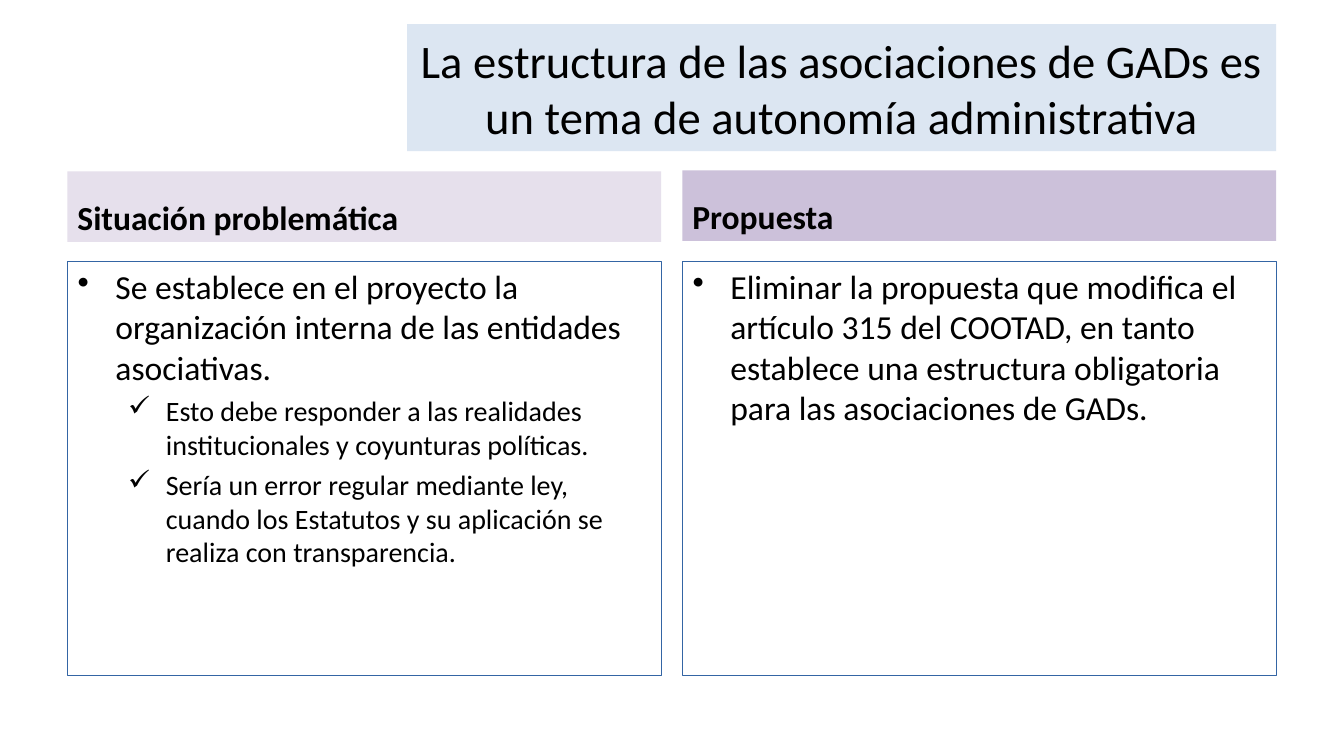
from dataclasses import dataclass

from lxml.etree import SubElement
from pptx import Presentation
from pptx.dml.color import RGBColor
from pptx.enum.shapes import MSO_SHAPE
from pptx.enum.text import MSO_ANCHOR, MSO_AUTO_SIZE, PP_ALIGN
from pptx.oxml.ns import qn
from pptx.util import Pt


@dataclass(frozen=True)
class Theme:
    """Colours, font and type sizes of the slide."""
    font: str = "Calibri"
    ink: str = "000000"
    title_fill: str = "DCE6F2"
    problem_fill: str = "E6E0EC"
    proposal_fill: str = "CCC1DA"
    border: str = "3465A4"
    border_width: float = 0.75
    title_size: float = 33.3
    main_size: float = 24
    detail_size: float = 20
    space_before: float = 4.8


THEME = Theme()
TITLE = "La estructura de las asociaciones de GADs es un tema de autonomía administrativa"
COLUMN_WIDTH = 424.1
HEADING_HEIGHT = 50.4
BODY_TOP, BODY_HEIGHT = 186.5, 295.9
BULLETS = [("•", 27.2, -27, THEME.main_size), ("✓", 63.2, -27, THEME.detail_size)]
COLUMNS = [
    (48.2, 122.4, "Situación problemática", THEME.problem_fill, [
        (0, "Se establece en el proyecto la organización interna de las entidades asociativas."),
        (1, "Esto debe responder a las realidades institucionales y coyunturas políticas."),
        (1, "Sería un error regular mediante ley, cuando los Estatutos y su aplicación "
            "se realiza con transparencia."),
    ]),
    (487.4, 121.7, "Propuesta", THEME.proposal_fill, [
        (0, "Eliminar la propuesta que modifica el artículo 315 del COOTAD, en tanto "
            "establece una estructura obligatoria para las asociaciones de GADs."),
    ]),
]


def style_text(paragraph, size, bold=False, align=PP_ALIGN.LEFT):
    """Apply the theme font to a paragraph's runs."""
    paragraph.alignment = align
    for run in paragraph.runs:
        run.font.name = THEME.font
        run.font.size = Pt(size)
        run.font.bold = bold
        run.font.color.rgb = RGBColor.from_string(THEME.ink)


def add_bullet(paragraph, level):
    """Give a paragraph the marker and hanging indent of its level."""
    marker, margin, indent, _ = BULLETS[level]
    paragraph.level = level
    properties = paragraph._p.get_or_add_pPr()
    properties.set("marL", str(Pt(margin)))
    properties.set("indent", str(Pt(indent)))
    marker_colour = SubElement(properties, qn("a:buClr"))
    SubElement(marker_colour, qn("a:srgbClr"), val=THEME.ink)
    SubElement(properties, qn("a:buChar"), char=marker)


def add_panel(slide, left, top, width, height, anchor):
    """Add a plain rectangle that holds wrapped text."""
    panel = slide.shapes.add_shape(
        MSO_SHAPE.RECTANGLE, Pt(left), Pt(top), Pt(width), Pt(height))
    panel.shadow.inherit = False
    panel.text_frame.word_wrap = True
    panel.text_frame.vertical_anchor = anchor
    return panel


def add_title(slide, left, top, width, height):
    """Place and format the title banner."""
    title = slide.shapes.title
    title.left, title.top, title.width, title.height = map(Pt, (left, top, width, height))
    title.fill.solid()
    title.fill.fore_color.rgb = RGBColor.from_string(THEME.title_fill)
    title.text_frame.text = TITLE
    title.text_frame.word_wrap = True
    title.text_frame.auto_size = MSO_AUTO_SIZE.NONE
    title.text_frame.vertical_anchor = MSO_ANCHOR.MIDDLE
    style_text(title.text_frame.paragraphs[0], THEME.title_size, align=PP_ALIGN.CENTER)


def add_heading(slide, left, top, width, height, wording, fill):
    """Add the coloured heading of a column."""
    heading = add_panel(slide, left, top, width, height, MSO_ANCHOR.BOTTOM)
    heading.fill.solid()
    heading.fill.fore_color.rgb = RGBColor.from_string(fill)
    heading.line.fill.background()
    heading.text_frame.text = wording
    style_text(heading.text_frame.paragraphs[0], THEME.main_size, bold=True)


def add_body(slide, left, top, width, height, points):
    """Add the outlined box with a column's bulleted points."""
    body = add_panel(slide, left, top, width, height, MSO_ANCHOR.TOP)
    body.fill.background()
    body.line.color.rgb = RGBColor.from_string(THEME.border)
    body.line.width = Pt(THEME.border_width)
    body.text_frame.text = "\n".join(wording for _, wording in points)
    for position, (point, (level, _)) in enumerate(zip(body.text_frame.paragraphs, points)):
        add_bullet(point, level)
        style_text(point, BULLETS[level][3])
        if position:
            point.space_before = Pt(THEME.space_before)


def main():
    """Build and save the slide."""
    presentation = Presentation()
    presentation.slide_width, presentation.slide_height = Pt(960), Pt(540)
    slide = presentation.slides.add_slide(presentation.slide_layouts[5])
    add_title(slide, 290.9, 17.3, 620.6, 90.7)
    for left, heading_top, heading, fill, points in COLUMNS:
        add_body(slide, left, BODY_TOP, COLUMN_WIDTH, BODY_HEIGHT, points)
        add_heading(slide, left, heading_top, COLUMN_WIDTH, HEADING_HEIGHT, heading, fill)
    presentation.save("out.pptx")


if __name__ == "__main__":
    main()
